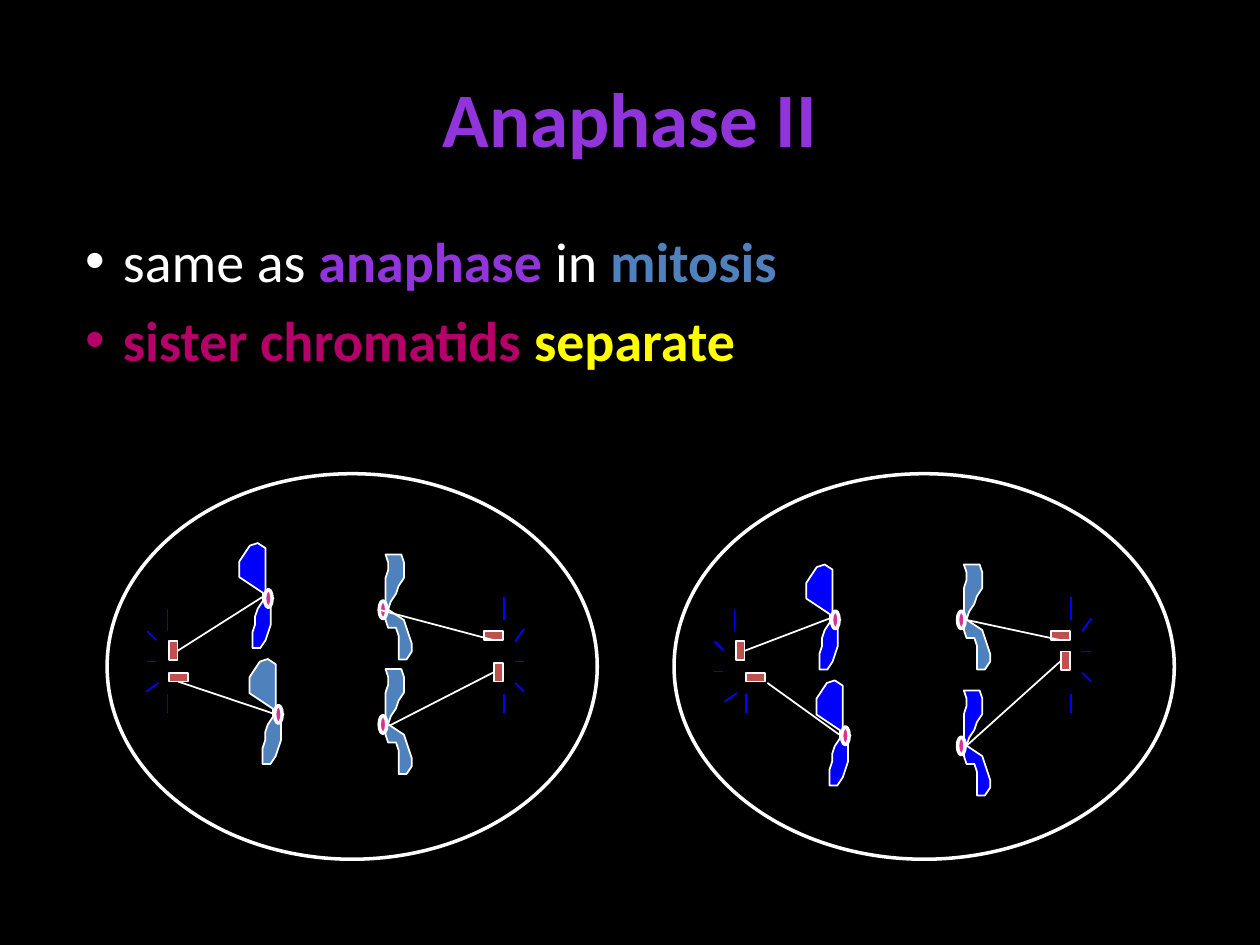
from dataclasses import dataclass

from lxml import etree
from pptx import Presentation
from pptx import util as u
from pptx.dml.color import RGBColor
from pptx.enum import shapes, text
from pptx.oxml.ns import qn


@dataclass(frozen=True)
class Theme:
    background: str = "000000"
    white: str = "FFFFFF"
    purple: str = "9234DB"
    steel: str = "4F81BD"
    magenta: str = "B50069"
    yellow: str = "FFFF00"
    blue: str = "0000FF"
    red: str = "C0504D"
    pink: str = "D93192"
    font: str = "Calibri"
    title_size: int = 44
    body_size: int = 32
    thin: int = 1
    thick: int = 2


T = Theme()


@dataclass(frozen=True)
class Chromatid:
    x: float
    y: float
    color: str
    side: str


@dataclass(frozen=True)
class Spindle:
    pole: int  # index into CENTRIOLES
    site: int | None  # connection site; None leaves the start loose
    start: tuple
    end: tuple


@dataclass(frozen=True)
class Aster:
    x: float
    top: float  # inner end of the upper ray
    fan: tuple  # three short rays
    low_x: float


# Chromatid outlines in 1/48 inch, and the centromere offset in inches
UNIT = 1 / 48
OUTLINES = {
    "left": [(13, 21), (10, 20), (10, 2), (7, 0), (4, 1), (2, 4), (0, 7),
             (0, 13), (3, 15), (6, 17), (9, 19), (9, 22), (7, 25), (6, 28),
             (6, 31), (5, 34), (5, 40), (8, 40), (10, 37), (11, 34),
             (12, 31), (12, 22)],
    "right": [(1, 21), (0, 18), (0, 9), (1, 6), (1, 3), (0, 0), (6, 0),
              (7, 3), (7, 9), (5, 12), (4, 15), (2, 18), (1, 21), (4, 23),
              (7, 25), (8, 28), (9, 31), (10, 34), (10, 37), (8, 40),
              (5, 40), (5, 31), (4, 28), (1, 28), (0, 25), (0, 22)],
}
CENTROMERE_DX = {"left": 0.2, "right": -0.05}
CENTROMERE_DY = 0.37

CELLS = [(0.85, 3.76, 3.89, 3.06), (5.35, 3.76, 3.97, 3.06)]
CHROMATIDS = [
    Chromatid(1.9, 4.31, T.blue, "left"), Chromatid(1.98, 5.23, T.steel, "left"),
    Chromatid(3.06, 4.4, T.steel, "right"), Chromatid(3.06, 5.31, T.steel, "right"),
    Chromatid(6.4, 4.48, T.blue, "left"), Chromatid(6.48, 5.4, T.blue, "left"),
    Chromatid(7.65, 4.48, T.steel, "right"), Chromatid(7.65, 5.48, T.blue, "right"),
]
UPRIGHT, FLAT = (0.07, 0.15), (0.15, 0.07)
CENTRIOLES = [
    (1.34, 5.09, *UPRIGHT), (1.34, 5.34, *FLAT),
    (3.84, 5.01, *FLAT), (3.92, 5.26, *UPRIGHT),
    (5.84, 5.09, *UPRIGHT), (5.92, 5.34, *FLAT),
    (8.34, 5.01, *FLAT), (8.42, 5.17, *UPRIGHT),
]
SPINDLES = [
    Spindle(0, 3, (1.42, 5.17), (2.08, 4.74)),
    Spindle(1, 2, (1.42, 5.42), (2.16, 5.66)),
    Spindle(2, 2, (3.91, 5.08), (3.01, 4.84)),
    Spindle(3, 1, (3.91, 5.33), (3.09, 5.76)),
    Spindle(4, 3, (5.92, 5.17), (6.58, 4.91)),
    Spindle(5, None, (6.09, 5.42), (6.66, 5.83)),
    Spindle(6, 2, (8.41, 5.08), (7.67, 4.92)),
    Spindle(7, 1, (8.41, 5.24), (7.67, 5.92)),
]


def right_fan(x: float, y: float) -> tuple:
    """Three rays right of x, the level one at height y."""
    near, far = x + 0.09, x + 0.16
    return (((near, y - 0.16), (far, y - 0.26)), ((near, y), (far, y)),
            ((near, y + 0.17), (far, y + 0.24)))


def left_fan(x: float, y: float, low_x: float) -> tuple:
    """Three rays left of x; the lowest one hangs from low_x."""
    near, far = x - 0.09, x - 0.16
    return (((far, y - 0.24), (near, y - 0.17)), ((far, y), (near, y)),
            ((low_x - 0.07, y + 0.17), (low_x - 0.17, y + 0.24)))


ASTERS = [
    Aster(1.33, 5.01, left_fan(1.33, 5.25, 1.33), 1.33),
    Aster(4, 4.92, right_fan(4, 5.25), 4),
    Aster(5.83, 5.01, left_fan(5.83, 5.33, 5.92), 5.92),
    Aster(8.5, 4.92, right_fan(8.5, 5.17), 8.5),
]


def cm(inches: float) -> u.Length:
    return u.Cm(inches * 2.54)


def rgb(color: str) -> RGBColor:
    return RGBColor.from_string(color)


def add_run(p, words: str, *, size: int, color: str, bold: bool = False) -> None:
    r = p.add_run()
    r.text = words
    r.font.name, r.font.size, r.font.bold = T.font, u.Pt(size), bold
    r.font.color.rgb = rgb(color)


def place(sp, x: float, y: float, w: float, h: float) -> None:
    sp.left, sp.top, sp.width, sp.height = map(cm, (x, y, w, h))


def style(sp, fill: str | None, weight: int) -> None:
    sp.shadow.inherit = False
    if fill:
        sp.fill.solid()
        sp.fill.fore_color.rgb = rgb(fill)
    else:
        sp.fill.background()
    sp.line.color.rgb, sp.line.width = rgb(T.white), u.Pt(weight)


def add_preset(canvas, kind, box: tuple, fill: str | None, weight: int):
    sp = canvas.add_shape(kind, *map(cm, box))
    style(sp, fill, weight)
    return sp


def add_line(canvas, start: tuple, end: tuple, color: str):
    c = canvas.add_connector(shapes.MSO_CONNECTOR.STRAIGHT, *map(cm, start + end))
    c.line.color.rgb, c.line.width = rgb(color), u.Pt(T.thin)
    etree.SubElement(c._element.spPr, qn("a:effectLst"))
    return c


def add_chromatid(canvas, c: Chromatid) -> None:
    first, *rest = OUTLINES[c.side]
    builder = canvas.build_freeform(*first, scale=cm(UNIT))
    builder.add_line_segments(rest, close=True)
    style(builder.convert_to_shape(cm(c.x), cm(c.y)), c.color, T.thin)


def main() -> None:
    prs = Presentation()
    prs.slide_width, prs.slide_height = cm(10), cm(7.5)
    s = prs.slides.add_slide(prs.slide_layouts[1])
    s.background.fill.solid()
    s.background.fill.fore_color.rgb = rgb(T.background)

    # Title
    title, body = s.placeholders
    place(title, 0.5, 0.3, 9, 1.25)
    title.text_frame.vertical_anchor = text.MSO_ANCHOR.MIDDLE
    p = title.text_frame.paragraphs[0]
    p.alignment = text.PP_ALIGN.CENTER
    add_run(p, "Anaphase II", size=T.title_size, color=T.purple, bold=True)

    # Bullets
    place(body, 0.5, 1.75, 9, 4.95)
    tf = body.text_frame
    bullets = [
        [("same as ", T.white, False), ("anaphase", T.purple, True),
         (" in ", T.white, False), ("mitosis", T.steel, True)],
        [("sister chromatids ", T.magenta, True), ("separate", T.yellow, True)],
    ]
    for i, runs in enumerate(bullets):
        p = tf.add_paragraph() if i else tf.paragraphs[0]
        pPr = p._p.get_or_add_pPr()
        pPr.set("marL", str(cm(0.375)))
        pPr.set("indent", str(cm(-0.3)))
        for words, color, bold in runs:
            add_run(p, words, size=T.body_size, color=color, bold=bold)

    # Two dividing cells
    canvas = s.shapes.add_group_shape().shapes
    for c in CHROMATIDS:
        add_chromatid(canvas, c)
    oval, rect = shapes.MSO_SHAPE.OVAL, shapes.MSO_SHAPE.RECTANGLE
    for box in CELLS:
        add_preset(canvas, oval, box, None, T.thick)
    poles = [add_preset(canvas, rect, box, T.red, T.thin) for box in CENTRIOLES]
    for a in ASTERS:
        rays = (((a.x, a.top), (a.x, a.top - 0.18)), *a.fan,
                ((a.low_x, 5.51), (a.low_x, 5.66)))
        for start, end in rays:
            add_line(canvas, start, end, T.blue)
    for c in CHROMATIDS:
        box = (c.x + CENTROMERE_DX[c.side], c.y + CENTROMERE_DY, 0.06, 0.14)
        add_preset(canvas, oval, box, T.pink, T.thick)
    for f in SPINDLES:
        line = add_line(canvas, f.start, f.end, T.white)
        if f.site is not None:
            line.begin_connect(poles[f.pole], f.site)

    prs.save("out.pptx")


if __name__ == "__main__":
    main()
